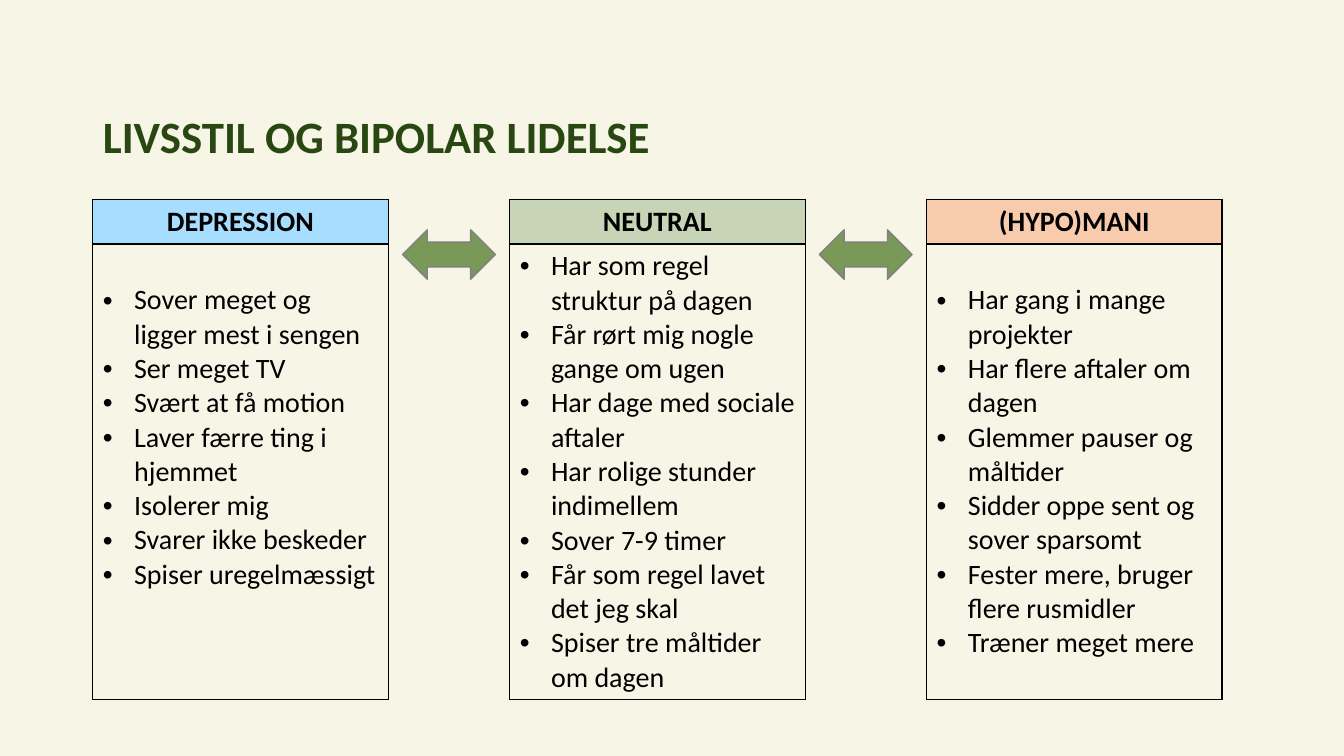
from lxml import etree
from pptx import Presentation
from pptx.dml.color import RGBColor
from pptx.enum import shapes, text
from pptx.oxml.ns import qn
from pptx.util import Inches, Pt

TITLE = "LIVSSTIL OG BIPOLAR LIDELSE"
CREAM = RGBColor(0xF7, 0xF6, 0xE6)
DARK_GREEN = RGBColor(0x29, 0x47, 0x11)
ARROW_GREEN = RGBColor(0x7A, 0x98, 0x57)
GREY = RGBColor(0x80, 0x80, 0x80)
BLACK = RGBColor(0, 0, 0)
BLUE = RGBColor(0xA7, 0xDD, 0xFF)
SAGE = RGBColor(0xC7, 0xD5, 0xB6)
PEACH = RGBColor(0xF8, 0xCB, 0xAD)

# Heading, heading fill, top margin of the list in inches, list
STATES = [
    ("DEPRESSION", BLUE, 0.39, [
        "Sover meget og ligger mest i sengen",
        "Ser meget TV",
        "Svært at få motion",
        "Laver færre ting i hjemmet",
        "Isolerer mig",
        "Svarer ikke beskeder",
        "Spiser uregelmæssigt",
    ]),
    ("NEUTRAL", SAGE, 0.05, [
        "Har som regel struktur på dagen",
        "Får rørt mig nogle gange om ugen",
        "Har dage med sociale aftaler",
        "Har rolige stunder indimellem",
        "Sover 7-9 timer",
        "Får som regel lavet det jeg skal",
        "Spiser tre måltider om dagen",
    ]),
    ("(HYPO)MANI", PEACH, 0.39, [
        "Har gang i mange projekter",
        "Har flere aftaler om dagen",
        "Glemmer pauser og måltider",
        "Sidder oppe sent og sover sparsomt",
        "Fester mere, bruger flere rusmidler",
        "Træner meget mere",
    ]),
]

# Grid in inches: three columns with an arrow centred in each gap
LEFT, RIGHT, TOP = 0.92, 12.12, 1.98
COL_W, HEAD_H, BODY_H = 2.93, 0.44, 4.52
GAP = (RIGHT - LEFT - len(STATES) * COL_W) / (len(STATES) - 1)
ARROW_W, ARROW_H, ARROW_TOP = 0.92, 0.49, 2.28
INDENT = 0.31


def add_run(p, words, size, color, bold=False):
    r = p.add_run()
    r.text = words
    r.font.name = "Calibri"
    r.font.size = Pt(size)
    r.font.bold = bold
    r.font.color.rgb = color


def add_bullet(p):
    pPr = p._p.get_or_add_pPr()
    pPr.set("marL", str(Inches(INDENT)))
    pPr.set("indent", str(-Inches(INDENT)))
    etree.SubElement(pPr, qn("a:buFont"), typeface="Arial")
    etree.SubElement(pPr, qn("a:buChar"), char="•")


def add_borders(cell):
    tcPr = cell._tc.get_or_add_tcPr()
    for side in ("lnL", "lnR", "lnT", "lnB"):
        ln = etree.SubElement(tcPr, qn("a:" + side), w=str(Pt(1)))
        fill = etree.SubElement(ln, qn("a:solidFill"))
        etree.SubElement(fill, qn("a:srgbClr"), val=str(BLACK))


def add_state(slide, left, heading, color, margin, habits):
    table = slide.shapes.add_table(
        2, 1, Inches(left), Inches(TOP), Inches(COL_W), Inches(HEAD_H + BODY_H)).table
    table.horz_banding = False
    for row, height in zip(table.rows, (HEAD_H, BODY_H)):
        row.height = Inches(height)
    head, body = table.cell(0, 0), table.cell(1, 0)
    for cell in (head, body):
        add_borders(cell)

    # Heading cell
    head.fill.solid()
    head.fill.fore_color.rgb = color
    p = head.text_frame.paragraphs[0]
    p.alignment = text.PP_ALIGN.CENTER
    add_run(p, heading, 20, BLACK, bold=True)

    # Bulleted cell
    body.fill.background()
    body.margin_top = Inches(margin)
    tf = body.text_frame
    for i, habit in enumerate(habits):
        p = tf.add_paragraph() if i else tf.paragraphs[0]
        add_bullet(p)
        add_run(p, habit, 20, BLACK)


def add_arrow(slide, left):
    sp = slide.shapes.add_shape(
        shapes.MSO_SHAPE.LEFT_RIGHT_ARROW,
        Inches(left), Inches(ARROW_TOP), Inches(ARROW_W), Inches(ARROW_H))
    sp.shadow.inherit = False
    sp.fill.solid()
    sp.fill.fore_color.rgb = ARROW_GREEN
    sp.line.color.rgb = GREY
    sp.line.width = Pt(1)


def main():
    prs = Presentation()
    prs.slide_width, prs.slide_height = Inches(13.33), Inches(7.5)
    slide = prs.slides.add_slide(prs.slide_layouts[5])
    slide.background.fill.solid()
    slide.background.fill.fore_color.rgb = CREAM

    # Title
    title = slide.shapes.title
    title.left, title.top = Inches(LEFT), Inches(0.96)
    title.width, title.height = Inches(11.5), Inches(0.84)
    tf = title.text_frame
    tf.vertical_anchor = text.MSO_ANCHOR.MIDDLE
    p = tf.paragraphs[0]
    p.alignment = text.PP_ALIGN.LEFT
    p.line_spacing = 0.9
    add_run(p, TITLE, 32, DARK_GREEN, bold=True)

    # Columns and the arrows between them
    for i, state in enumerate(STATES):
        left = LEFT + i * (COL_W + GAP)
        add_state(slide, left, *state)
        if i:
            add_arrow(slide, left - (GAP + ARROW_W) / 2)

    prs.save("out.pptx")


if __name__ == "__main__":
    main()
